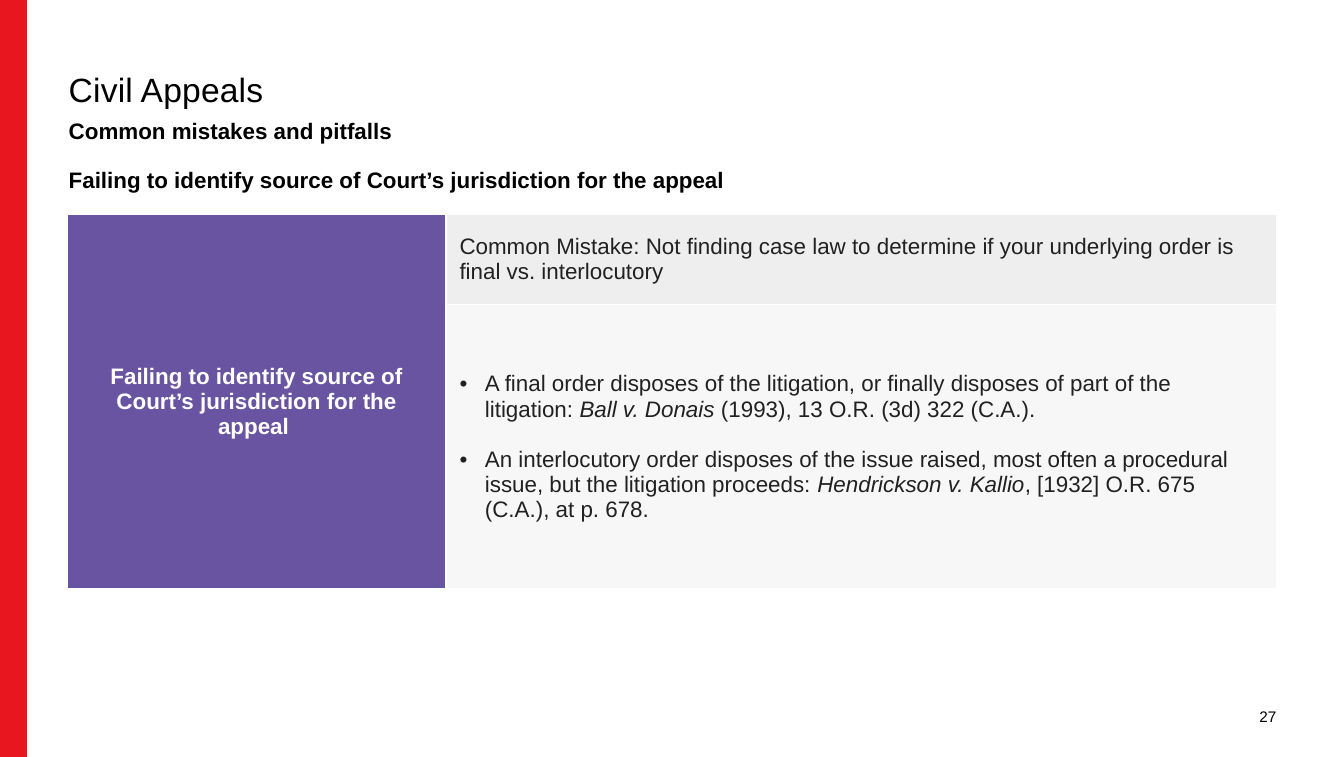
from lxml import etree
from pptx import Presentation
from pptx import util as u
from pptx.dml.color import RGBColor
from pptx.enum import shapes, text
from pptx.oxml import ns

COLORS = {
    "accent": "E8171F",
    "topic": "6954A2",
    "mistake": "EEEEEF",
    "rules": "F7F7F7",
    "ink": "000000",
    "body": "212121",
    "white": "FFFFFF",
}
SLIDE_WIDTH, SLIDE_HEIGHT = 25.4, 14.3
TOPIC = "Failing to identify source of Court’s jurisdiction for the appeal"
MISTAKE = ("Common Mistake: Not finding case law to determine if your "
           "underlying order is final vs. interlocutory")
# Each rule: explanation, case name, citation
RULES = [
    ("A final order disposes of the litigation, or finally disposes of part "
     "of the litigation: ", "Ball v. Donais ",
     "(1993), 13 O.R. (3d) 322 (C.A.)."),
    ("An interlocutory order disposes of the issue raised, most often a "
     "procedural issue, but the litigation proceeds: ",
     "Hendrickson v. Kallio", ", [1932] O.R. 675 (C.A.), at p. 678."),
]


def rgb(name):
    return RGBColor.from_string(COLORS[name])


class SlideBuilder:
    font_name = "Arial"
    text_size = 12

    def __init__(self, slide):
        self.slide = slide

    def style(self, paragraph, color="ink", size=text_size, bold=False):
        font = paragraph.font
        font.name, font.size, font.bold = self.font_name, u.Pt(size), bold
        font.color.rgb = rgb(color)

    def bar(self, left, top, width, height, color):
        bar = self.slide.shapes.add_shape(
            shapes.MSO_SHAPE.RECTANGLE,
            u.Cm(left), u.Cm(top), u.Cm(width), u.Cm(height))
        bar.shadow.inherit = False
        bar.fill.solid()
        bar.fill.fore_color.rgb = rgb(color)
        bar.line.fill.background()

    def label(self, words, left, top, width, height, size=text_size,
              bold=False, align=text.PP_ALIGN.LEFT,
              anchor=text.MSO_ANCHOR.TOP):
        frame = self.slide.shapes.add_textbox(
            u.Cm(left), u.Cm(top), u.Cm(width), u.Cm(height)).text_frame
        frame.margin_left = frame.margin_right = 0
        frame.margin_top = frame.margin_bottom = 0
        frame.word_wrap = True
        frame.vertical_anchor = anchor
        paragraph = frame.paragraphs[0]
        paragraph.text = words
        paragraph.alignment = align
        self.style(paragraph, size=size, bold=bold)
        return paragraph

    def table(self, left, top, widths, heights):
        table = self.slide.shapes.add_table(
            len(heights), len(widths), u.Cm(left), u.Cm(top),
            u.Cm(sum(widths)), u.Cm(sum(heights))).table
        table.first_row = table.horz_banding = False
        for column, width in zip(table.columns, widths):
            column.width = u.Cm(width)
        for row, height in zip(table.rows, heights):
            row.height = u.Cm(height)
        return table

    def cell(self, cell, fill):
        """Give a cell white borders, a fill and middle anchoring."""
        properties = cell._tc.get_or_add_tcPr()
        for side in ("a:lnL", "a:lnR", "a:lnT", "a:lnB"):
            line = etree.SubElement(properties, ns.qn(side), w=str(u.Pt(1)))
            solid = etree.SubElement(line, ns.qn("a:solidFill"))
            etree.SubElement(solid, ns.qn("a:srgbClr"), val=COLORS["white"])
        cell.fill.solid()
        cell.fill.fore_color.rgb = rgb(fill)
        cell.vertical_anchor = text.MSO_ANCHOR.MIDDLE

    def bullet(self, paragraph, rule):
        """Write a bulleted rule with its case name in italics."""
        indent = u.Cm(0.48)
        properties = paragraph._p.get_or_add_pPr()
        properties.set("marL", str(indent))
        properties.set("indent", str(-indent))
        etree.SubElement(properties, ns.qn("a:buFont"), typeface=self.font_name)
        etree.SubElement(properties, ns.qn("a:buChar"), char="•")
        explanation, case_name, citation = rule
        for words in (explanation, case_name, citation):
            run = paragraph.add_run()
            run.text = words
            run.font.italic = words == case_name
        self.style(paragraph, "body")


def main():
    deck = Presentation()
    deck.slide_width, deck.slide_height = u.Cm(SLIDE_WIDTH), u.Cm(SLIDE_HEIGHT)
    page = SlideBuilder(deck.slides.add_slide(deck.slide_layouts[6]))
    margin, content_width = 1.3, 22.86

    page.bar(0, 0, 0.51, SLIDE_HEIGHT, "accent")
    page.label("27", 22.7, 12.78, 1.42, 1.52, size=8.2,
               align=text.PP_ALIGN.RIGHT, anchor=text.MSO_ANCHOR.MIDDLE)
    title = page.label("Civil Appeals", margin, 1.21, content_width, 0.94,
                       size=18, anchor=text.MSO_ANCHOR.MIDDLE)
    title.runs[0]._r.get_or_add_rPr().set("spc", "10")
    page.label("Common mistakes and pitfalls", margin, 2.21, content_width,
               0.58, bold=True)
    page.label(TOPIC, margin, 3.02, 13.2, 0.76, bold=True,
               anchor=text.MSO_ANCHOR.MIDDLE)

    table = page.table(1.27, 4.05, (7.16, 15.7), (1.7, 5.38))
    fills = (("topic", "mistake"), ("topic", "rules"))
    for row, row_fills in enumerate(fills):
        for column, fill in enumerate(row_fills):
            page.cell(table.cell(row, column), fill)

    topic_cell = table.cell(0, 0)
    topic_cell.merge(table.cell(1, 0))
    topic_cell.text = TOPIC + " "
    topic = topic_cell.text_frame.paragraphs[0]
    topic.alignment = text.PP_ALIGN.CENTER
    page.style(topic, "white", bold=True)

    mistake_cell = table.cell(0, 1)
    mistake_cell.text = MISTAKE
    page.style(mistake_cell.text_frame.paragraphs[0], "body")

    rules_frame = table.cell(1, 1).text_frame
    final_order = rules_frame.paragraphs[0]
    interlocutory_order = rules_frame.add_paragraph()
    interlocutory_order.space_before = u.Pt(13.4)
    for paragraph, rule in zip((final_order, interlocutory_order), RULES):
        page.bullet(paragraph, rule)

    deck.save("out.pptx")


if __name__ == "__main__":
    main()
